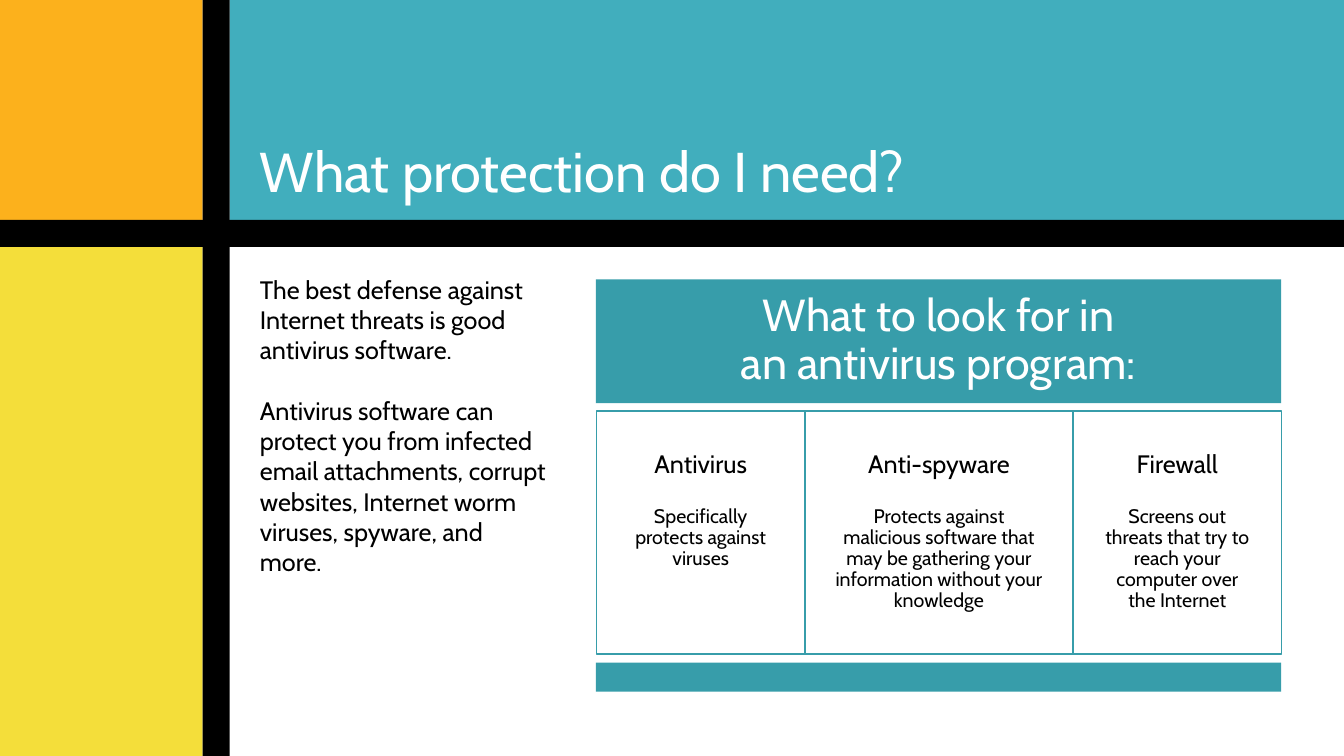
from pptx import Presentation
from pptx.dml.color import RGBColor
from pptx.enum.shapes import MSO_SHAPE
from pptx.enum.text import MSO_ANCHOR, MSO_AUTO_SIZE, PP_ALIGN
from pptx.util import Cm, Pt

COLORS = {
    "teal": "41AEBD", "dark_teal": "379DAA", "orange": "FCB11C",
    "yellow": "F4DE3A", "black": "000000", "white": "FFFFFF",
}
WIDTH, HEIGHT = 33.87, 19.05


class Deck:
    """Holds the style and the current slide."""
    font = "Cabin"

    def __init__(self, prs):
        self.s = prs.slides.add_slide(prs.slide_layouts[5])

    def color(self, name):
        return RGBColor.from_string(COLORS[name])

    def rect(self, x, y, w, h, fill, line=None):
        sp = self.s.shapes.add_shape(MSO_SHAPE.RECTANGLE, Cm(x), Cm(y), Cm(w), Cm(h))
        sp.shadow.inherit = False
        sp.fill.solid()
        sp.fill.fore_color.rgb = self.color(fill)
        if line:
            sp.line.color.rgb = self.color(line)
            sp.line.width = Pt(1)
        else:
            sp.line.fill.background()
        return sp

    def frame(self, sp, side, top, bottom, anchor=MSO_ANCHOR.TOP):
        tf = sp.text_frame
        tf.word_wrap = True
        tf.auto_size = MSO_AUTO_SIZE.NONE
        tf.vertical_anchor = anchor
        tf.margin_left = tf.margin_right = Cm(side)
        tf.margin_top, tf.margin_bottom = Cm(top), Cm(bottom)
        return tf

    def paragraph(self, tf, text, size, color="black", align=PP_ALIGN.LEFT,
                  spacing=1.0, before=0):
        p = tf.paragraphs[0]
        if p.runs:
            p = tf.add_paragraph()
        p.alignment, p.line_spacing, p.space_before = align, spacing, Pt(before)
        for i, part in enumerate(text.split("\n")):
            if i:
                p.add_line_break()
            r = p.add_run()
            r.text = part
            r.font.name, r.font.size = self.font, Pt(size)
            r.font.color.rgb = self.color(color)

    def text(self, x, y, w, h):
        sp = self.s.shapes.add_textbox(Cm(x), Cm(y), Cm(w), Cm(h))
        return self.frame(sp, 0.76, 0.51, 0.51)

    def title(self, text, x, y, w, h):
        sp = self.s.shapes.title
        sp.left, sp.top, sp.width, sp.height = Cm(x), Cm(y), Cm(w), Cm(h)
        tf = self.frame(sp, 0.76, 0.38, 0.38, MSO_ANCHOR.BOTTOM)
        self.paragraph(tf, text, 40, "white", spacing=0.9)
        self.s.shapes.element.append(sp.element)  # in front of the bands

    def card(self, x, y, w, h, name, detail):
        sp = self.rect(x, y, w, h, "white", "dark_teal")
        tf = self.frame(sp, 0.76, 1.02, 0.51)
        self.paragraph(tf, name, 18, align=PP_ALIGN.CENTER, spacing=0.9)
        self.paragraph(tf, detail, 14, align=PP_ALIGN.CENTER, spacing=0.9, before=19.5)


def main():
    prs = Presentation()
    prs.slide_width, prs.slide_height = Cm(WIDTH), Cm(HEIGHT)
    deck = Deck(prs)

    # Colour blocks and the black cross between them
    left, right, upper, lower = 5.11, 5.79, 5.54, 6.22
    deck.rect(right, 0, WIDTH - right, upper, "teal")
    deck.rect(0, 0, left, upper, "orange")
    deck.rect(0, lower, left, HEIGHT - lower, "yellow")
    deck.rect(0, upper, WIDTH, lower - upper, "black")
    deck.rect(left, 0, right - left, HEIGHT, "black")

    # Title
    deck.title("What protection do I need?", right, 3.23, 27.05, 2.31)

    # Introduction
    tf = deck.text(right, 6.4, 8.74, 8.71)
    deck.paragraph(tf, "The best defense against Internet threats is good "
                   "antivirus software.", 18)
    deck.paragraph(tf, "Antivirus software can protect you from infected email "
                   "attachments, corrupt websites, Internet worm viruses, "
                   "spyware, and more.", 18, before=21.6)

    # Panel heading and foot
    panel_x, panel_w = 15.02, 17.27
    heading = deck.rect(panel_x, 7.04, panel_w, 3.12, "dark_teal")
    tf = deck.frame(heading, 0.33, 0.33, 0.33, MSO_ANCHOR.MIDDLE)
    deck.paragraph(tf, "What to look for in\nan antivirus program:", 32, "white",
                   PP_ALIGN.CENTER, 0.9)
    deck.rect(panel_x, 16.7, panel_w, 0.73, "dark_teal")

    # Cards side by side
    x = panel_x + 0.01
    for w, name, detail in [
        (5.26, "Antivirus", "Specifically protects against viruses"),
        (6.75, "Anti-spyware", "Protects against malicious software that may be "
         "gathering your information without your knowledge"),
        (5.26, "Firewall", "Screens out threats that try to reach your computer "
         "over the Internet"),
    ]:
        deck.card(x, 10.36, w, 6.12, name, detail)
        x += w

    prs.save("out.pptx")


if __name__ == "__main__":
    main()
